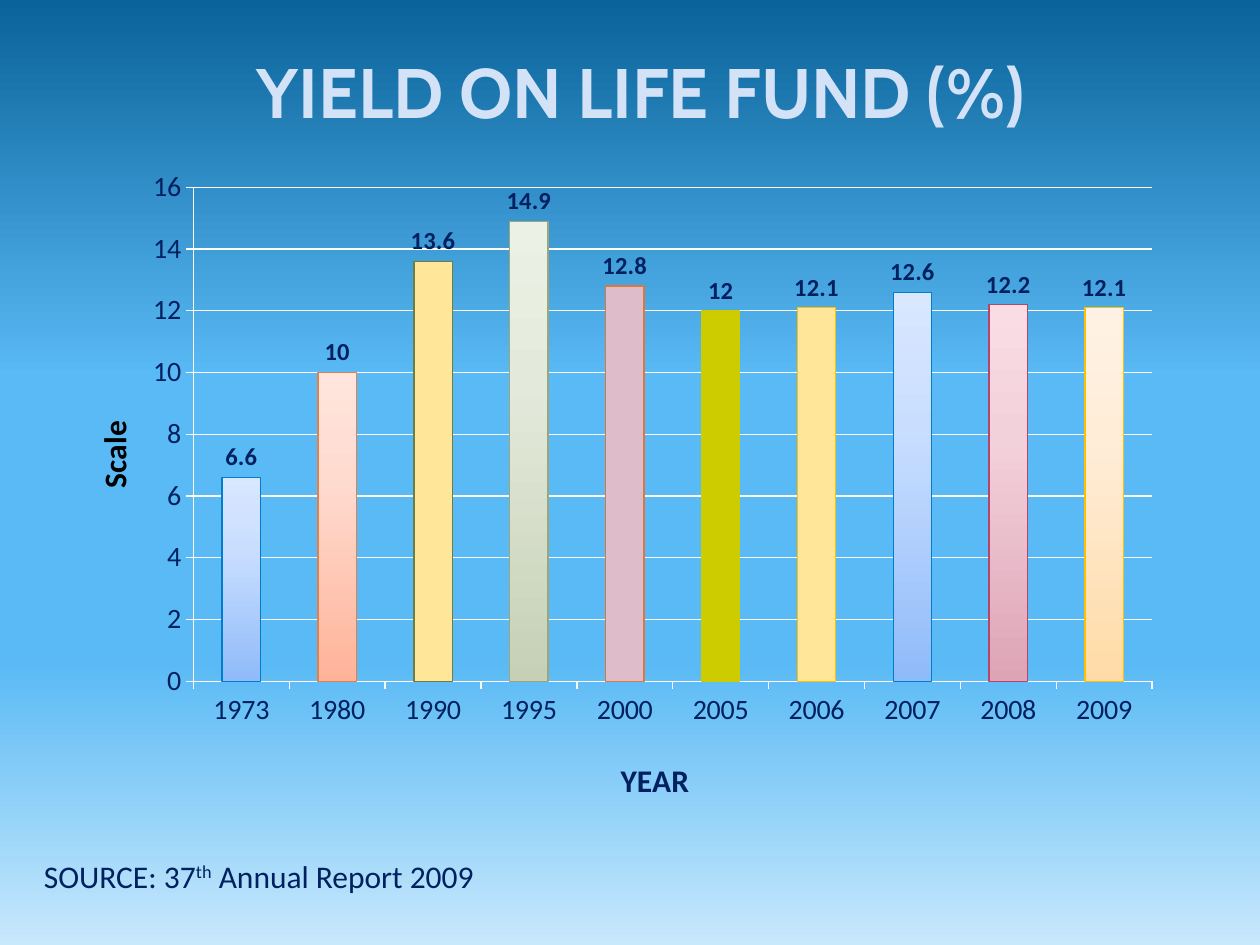
from dataclasses import dataclass
from typing import Optional

from lxml import etree
from pptx import Presentation
from pptx.chart.axis import _BaseAxis
from pptx.chart.chart import Chart
from pptx.chart.data import CategoryChartData
from pptx.chart.series import BarSeries
from pptx.dml.color import RGBColor
from pptx.dml.fill import FillFormat
from pptx.enum.chart import XL_CHART_TYPE, XL_LABEL_POSITION, XL_TICK_MARK
from pptx.enum.text import MSO_ANCHOR, MSO_AUTO_SIZE, PP_ALIGN
from pptx.oxml.ns import qn
from pptx.slide import Slide
from pptx.text.text import Font
from pptx.util import Inches, Pt

COLUMN = XL_CHART_TYPE.COLUMN_CLUSTERED
OUTSIDE_END = XL_LABEL_POSITION.OUTSIDE_END
TICK_OUTSIDE = XL_TICK_MARK.OUTSIDE
TICK_NONE = XL_TICK_MARK.NONE
CENTER = PP_ALIGN.CENTER
MIDDLE = MSO_ANCHOR.MIDDLE
NO_AUTOFIT = MSO_AUTO_SIZE.NONE
TITLE_ONLY = 5

Stops = tuple[tuple[int, str], ...]


@dataclass(frozen=True)
class Theme:
    title_font: str = "Cabin"
    body_font: str = "Calibri"
    title: str = "D4E2F8"
    navy: str = "002060"
    black: str = "000000"
    white: str = "FFFFFF"
    series: str = "FFC000"
    background: Stops = ((0, "0A639A"), (40, "5ABAF5"), (70, "5ABAF5"), (100, "C8E8FC"))
    title_size: int = 40
    text_size: int = 18
    tick_size: int = 16
    label_size: int = 14


@dataclass(frozen=True)
class Column:
    year: str
    value: float
    fill: tuple[str, ...]
    outline: str


THEME = Theme()
BLUE = ("90BBF9", "C9DEFF", "D9E7FF")
COLUMNS = (
    Column("1973", 6.6, BLUE, "007ECB"),
    Column("1980", 10, ("FFB399", "FFDBCF", "FFE5DE"), "E2804A"),
    Column("1990", 13.6, ("FFE699",), "6B7F45"),
    Column("1995", 14.9, ("C6D0B6", "E4EADB", "ECF1E5"), "9CA67A"),
    Column("2000", 12.8, ("DEBCC9",), "D9783F"),
    Column("2005", 12, ("CCCC00",), "CCCC00"),
    Column("2006", 12.1, ("FFE699",), "FFC000"),
    Column("2007", 12.6, BLUE, "007ECB"),
    Column("2008", 12.2, ("DEA4B6", "F3D1DB", "F9DDE5"), "B3476A"),
    Column("2009", 12.1, ("FFDBA7", "FFEDD8", "FFF2E4"), "FFC000"),
)
COLUMN_STOPS = (0, 65, 100)


def style_font(font: Font, size: int, color: str, bold: bool = False,
               name: str = THEME.body_font) -> None:
    font.name = name
    font.size = Pt(size)
    font.bold = bold
    font.color.rgb = RGBColor.from_string(color)


def set_gradient(fill: FillFormat, owner: etree._Element, stops: Stops, angle: int) -> None:
    fill.gradient()
    fill.gradient_angle = angle
    stop_list = owner.findall(".//" + qn("a:gsLst"))[-1]
    for stop in list(stop_list):
        stop_list.remove(stop)
    for position, color in stops:
        stop = etree.SubElement(stop_list, qn("a:gs"), pos=str(position * 1000))
        etree.SubElement(stop, qn("a:srgbClr"), val=color)


def place_part(owner: etree._Element, index: int, x: float, y: float,
               width: Optional[float] = None, height: Optional[float] = None) -> None:
    for existing in owner.findall(qn("c:layout")):
        owner.remove(existing)
    layout = etree.Element(qn("c:layout"))
    manual = etree.SubElement(layout, qn("c:manualLayout"))
    settings = [("xMode", "edge"), ("yMode", "edge"), ("x", x), ("y", y)]
    if width is not None and height is not None:
        settings = [("layoutTarget", "inner"), *settings, ("w", width), ("h", height)]
    for tag, value in settings:
        etree.SubElement(manual, qn("c:" + tag), val=str(value))
    owner.insert(index, layout)


def style_axis(axis: _BaseAxis, title: str, color: str, x: float, y: float) -> None:
    run = axis.axis_title.text_frame.paragraphs[0].add_run()
    run.text = title
    style_font(run.font, THEME.text_size, color, bold=True)
    place_part(axis.axis_title.element, 1, x, y)
    style_font(axis.tick_labels.font, THEME.tick_size, THEME.navy)
    axis.major_tick_mark = TICK_OUTSIDE
    axis.minor_tick_mark = TICK_NONE
    axis.format.line.color.rgb = RGBColor.from_string(THEME.white)
    axis.format.line.width = Pt(0.75)


def style_columns(series: BarSeries) -> None:
    series.format.fill.solid()
    series.format.fill.fore_color.rgb = RGBColor.from_string(THEME.series)
    for index, column in enumerate(COLUMNS):
        point_format = series.points[index].format
        if len(column.fill) > 1:
            stops = tuple(zip(COLUMN_STOPS, column.fill))
            set_gradient(point_format.fill, series._element, stops, 90)
        else:
            point_format.fill.solid()
            point_format.fill.fore_color.rgb = RGBColor.from_string(column.fill[0])
        point_format.line.color.rgb = RGBColor.from_string(column.outline)
        point_format.line.width = Pt(0.75)


def add_yield_chart(slide: Slide) -> Chart:
    data = CategoryChartData()
    data.categories = [column.year for column in COLUMNS]
    data.add_series("Series 1", [column.value for column in COLUMNS])
    chart = slide.shapes.add_chart(
        COLUMN, Inches(0.42), Inches(1.25), Inches(8.92), Inches(5.25), data).chart
    style_font(chart.font, THEME.text_size, THEME.white)
    chart.has_title = False
    chart.has_legend = False
    place_part(chart.element.find(".//" + qn("c:plotArea")), 0, 0.125, 0.045, 0.853, 0.747)

    style_axis(chart.category_axis, "YEAR", THEME.navy, 0.5, 0.9)
    value_axis = chart.value_axis
    style_axis(value_axis, "Scale", THEME.black, 0.03, 0.39)
    value_axis.minimum_scale = 0
    value_axis.maximum_scale = 16
    value_axis.major_unit = 2
    value_axis.has_major_gridlines = True
    gridline = value_axis.major_gridlines.format.line
    gridline.color.rgb = RGBColor.from_string(THEME.white)
    gridline.width = Pt(0.75)

    plot = chart.plots[0]
    plot.gap_width = 150
    plot.vary_by_categories = False
    plot.has_data_labels = True
    labels = plot.data_labels
    labels.show_value = True
    labels.position = OUTSIDE_END
    style_font(labels.font, THEME.label_size, THEME.navy, bold=True)
    style_columns(plot.series[0])
    return chart


def add_title(slide: Slide) -> None:
    title = slide.shapes.title
    title.left, title.top = Inches(1.33), Inches(0.33)
    title.width, title.height = Inches(7.51), Inches(0.77)
    frame = title.text_frame
    frame.word_wrap = False
    frame.auto_size = NO_AUTOFIT
    frame.vertical_anchor = MIDDLE
    paragraph = frame.paragraphs[0]
    paragraph.alignment = CENTER
    run = paragraph.add_run()
    run.text = "YIELD ON LIFE FUND (%)"
    style_font(run.font, THEME.title_size, THEME.title, bold=True, name=THEME.title_font)


def add_source(slide: Slide) -> None:
    box = slide.shapes.add_textbox(Inches(0.25), Inches(6.75), Inches(3.92), Inches(0.4))
    box.text_frame.word_wrap = True
    paragraph = box.text_frame.paragraphs[0]
    for text, baseline in (("SOURCE: 37", 0), ("th", 30000), (" Annual Report 2009", 0)):
        run = paragraph.add_run()
        run.text = text
        style_font(run.font, THEME.text_size, THEME.navy)
        run._r.get_or_add_rPr().set("baseline", str(baseline))


def main() -> None:
    presentation = Presentation()
    presentation.slide_width = Inches(10)
    presentation.slide_height = Inches(7.5)
    slide = presentation.slides.add_slide(presentation.slide_layouts[TITLE_ONLY])
    set_gradient(slide.background.fill, slide.element, THEME.background, 270)
    add_yield_chart(slide)
    add_title(slide)
    add_source(slide)
    presentation.save("out.pptx")


if __name__ == "__main__":
    main()
